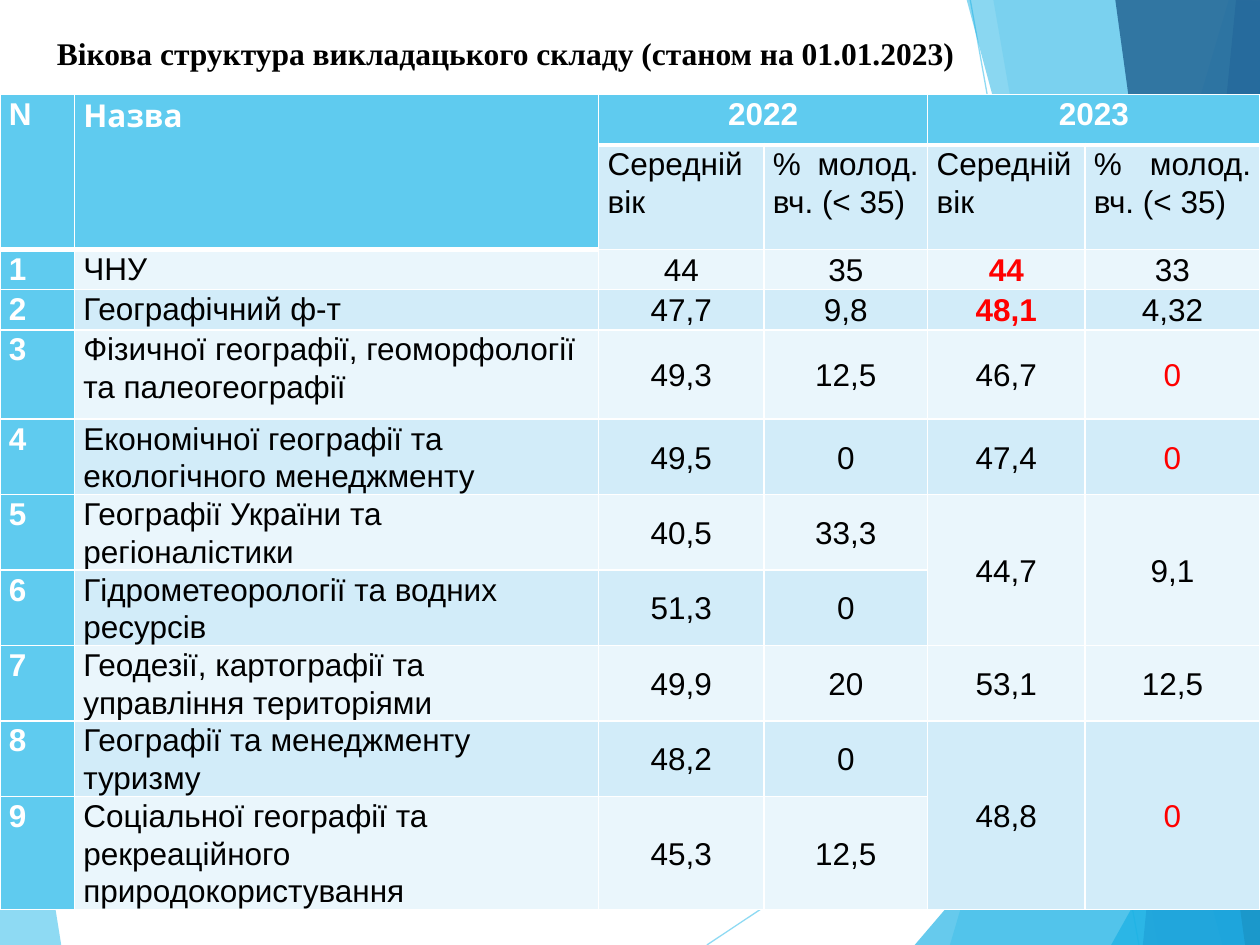
from typing import NamedTuple

from lxml import etree
from pptx import Presentation
from pptx.dml.color import RGBColor
from pptx.enum.shapes import MSO_CONNECTOR
from pptx.enum.text import MSO_ANCHOR, PP_ALIGN
from pptx.oxml.ns import qn
from pptx.util import Cm, Pt

LEFT, CENTER, JUSTIFY = PP_ALIGN.LEFT, PP_ALIGN.CENTER, PP_ALIGN.JUSTIFY
TOP, MIDDLE = MSO_ANCHOR.TOP, MSO_ANCHOR.MIDDLE
STRAIGHT = MSO_CONNECTOR.STRAIGHT

COLORS = {
    "white": "FFFFFF", "black": "000000", "red": "FF0000",
    "sky": "5FCBEF", "cyan": "17B0E4", "blue": "2E83C3", "navy": "226292",
    "band_dark": "D2ECF9", "band_light": "EAF6FC",
}


class Facet(NamedTuple):
    points: list[tuple[float, float]]  # cm
    color: str
    opacity: int


class Ray(NamedTuple):
    start: tuple[float, float]  # cm
    end: tuple[float, float]


class Row(NamedTuple):
    name: str
    values: list[str | None]  # None continues the cell above
    red: tuple[int, ...] = ()
    bold: tuple[int, ...] = ()


CORNER = Facet([(-0.03, 11.15), (1.24, 19.08), (-0.03, 19.05)], "sky", 70)
RAYS = [Ray((14.25, 19.05), (25.43, 11.61)), Ray((19.56, 0), (22.96, 19.05))]
FACETS = [
    Facet([(24.77, 0), (19.15, 19.05), (25.45, 19.08), (25.43, 0.03)], "sky", 36),
    Facet([(20.02, -0.03), (23.34, 19.05), (25.43, 19.05), (25.43, -0.03)], "sky", 20),
    Facet([(18.44, 19.05), (25.4, 10.9), (25.43, 19.05)], "cyan", 66),
    Facet([(19.48, -0.03), (24.64, 19.05), (25.43, 19.02), (25.43, -0.03)], "cyan", 50),
    Facet([(24.92, -0.03), (23.04, 19.05), (25.43, 19.05), (25.4, -0.03)], "blue", 70),
    Facet([(22.48, -0.03), (25.1, 19.05), (25.45, 19.05), (25.4, -0.03)], "navy", 82),
    Facet([(22.4, 19.05), (25.45, 13.59), (25.45, 19.05)], "cyan", 66),
]

COL_WIDTHS = [1.5, 10.57, 3.33, 3.3, 3.17, 3.53]
ROW_HEIGHTS = [1.02, 2.11, 0.81, 0.81, 1.8] + [1.4] * 5 + [2.11]
HEADERS = [(0, "N", "Arial", JUSTIFY), (1, "Назва", "Cabin", JUSTIFY),
           (2, "2022", "Arial", CENTER), (4, "2023", "Arial", CENTER)]
SUBHEADERS = ["Середній вік", "% молод. вч. (< 35)"] * 2
ROWS = [
    Row("ЧНУ", ["44", "35", "44", "33"], red=(2,), bold=(2,)),
    Row("Географічний ф-т", ["47,7", "9,8", "48,1", "4,32"], red=(2,), bold=(2,)),
    Row("Фізичної географії, геоморфології та палеогеографії",
        ["49,3", "12,5", "46,7", "0"], red=(3,)),
    Row("Економічної географії та екологічного менеджменту",
        ["49,5", "0", "47,4", "0"], red=(3,)),
    Row("Географії України та регіоналістики", ["40,5", "33,3", "44,7", "9,1"]),
    Row("Гідрометеорології та водних ресурсів", ["51,3", "0", None, None]),
    Row("Геодезії, картографії та управління територіями",
        ["49,9", "20", "53,1", "12,5"]),
    Row("Географії та менеджменту туризму", ["48,2", "0", "48,8", "0"], red=(3,)),
    Row("Соціальної географії та рекреаційного природокористування",
        ["45,3", "12,5", None, None]),
]


def rgb(name: str) -> RGBColor:
    return RGBColor.from_string(COLORS[name])


def set_opacity(fill_parent, opacity: int) -> None:
    clr = next(fill_parent.iter(qn("a:srgbClr")))
    etree.SubElement(clr, qn("a:alpha"), val=str(opacity * 1000))


def draw_facet(s, facet: Facet) -> None:
    pts = [(Cm(x), Cm(y)) for x, y in facet.points]
    builder = s.shapes.build_freeform(*pts[0], scale=1.0)
    builder.add_line_segments(pts[1:], close=True)
    sp = builder.convert_to_shape()
    sp.shadow.inherit = False
    sp.fill.solid()
    sp.fill.fore_color.rgb = rgb(facet.color)
    set_opacity(sp.fill._xPr, facet.opacity)
    sp.line.fill.background()


def draw_ray(s, ray: Ray) -> None:
    ends = [Cm(v) for v in ray.start + ray.end]
    cn = s.shapes.add_connector(STRAIGHT, *ends)
    cn.line.color.rgb = rgb("sky")
    cn.line.width = Pt(0.75)
    set_opacity(cn.line._get_or_add_ln(), 70)
    etree.SubElement(cn._element.spPr, qn("a:effectLst"))


def write(tf, text: str, *, font: str = "Arial", color: str = "black",
          bold: bool = False, align=LEFT, spacing: float = 1.0) -> None:
    p = tf.paragraphs[0]
    p.alignment, p.line_spacing = align, spacing
    r = p.add_run()
    r.text = text
    r.font.size, r.font.name, r.font.bold = Pt(18), font, bold
    r.font.color.rgb = rgb(color)


def style_cell(cell, fill: str, bottom: float = 1) -> None:
    cell.margin_left = cell.margin_right = Cm(0.18)
    cell.margin_top = cell.margin_bottom = 0
    tc_pr = cell._tc.get_or_add_tcPr()
    for side, width in (("L", 1), ("R", 1), ("T", 1), ("B", bottom)):
        ln = etree.SubElement(tc_pr, qn(f"a:ln{side}"), w=str(Pt(width)))
        solid = etree.SubElement(ln, qn("a:solidFill"))
        etree.SubElement(solid, qn("a:srgbClr"), val=COLORS["white"])
    cell.fill.solid()
    cell.fill.fore_color.rgb = rgb(fill)


def fill_cell(cell, text: str, *, anchor=TOP, **fmt) -> None:
    cell.vertical_anchor = anchor
    write(cell.text_frame, text, spacing=1.07, **fmt)


def draw_table(s) -> None:
    n_rows, n_cols = len(ROW_HEIGHTS), len(COL_WIDTHS)
    frame = s.shapes.add_table(n_rows, n_cols, 0, Cm(1.9),
                               Cm(sum(COL_WIDTHS)), Cm(sum(ROW_HEIGHTS)))
    tbl = frame.table
    tbl.first_row = tbl.horz_banding = False
    for col, width in zip(tbl.columns, COL_WIDTHS):
        col.width = Cm(width)
    for row, height in zip(tbl.rows, ROW_HEIGHTS):
        row.height = Cm(height)

    # Fills and borders
    for i in range(n_rows):
        band = "band_dark" if i % 2 else "band_light"
        for j in range(n_cols):
            header = i == 0 or (i == 1 and j < 2)
            style_cell(tbl.cell(i, j), "sky" if header or j == 0 else band,
                       bottom=3 if header else 1)

    # Two-level header
    for j, text, font, align in HEADERS:
        end = tbl.cell(1, j) if j < 2 else tbl.cell(0, j + 1)
        tbl.cell(0, j).merge(end)
        fill_cell(tbl.cell(0, j), text, font=font, color="white", bold=True, align=align)
    for j, text in enumerate(SUBHEADERS, 2):
        fill_cell(tbl.cell(1, j), text, align=JUSTIFY)

    # Body
    for i, row in enumerate(ROWS, 2):
        fill_cell(tbl.cell(i, 0), str(i - 1), color="white", bold=True, align=JUSTIFY)
        fill_cell(tbl.cell(i, 1), row.name)
        for k, value in enumerate(row.values):
            cell = tbl.cell(i, k + 2)
            if value is None:
                tbl.cell(i - 1, k + 2).merge(cell)
            else:
                fill_cell(cell, value, anchor=MIDDLE, align=CENTER, bold=k in row.bold,
                          color="red" if k in row.red else "black")


def main() -> None:
    prs = Presentation()
    prs.slide_width, prs.slide_height = Cm(25.4), Cm(19.05)
    s = prs.slides.add_slide(prs.slide_layouts[6])

    # Faceted background
    draw_facet(s, CORNER)
    for ray in RAYS:
        draw_ray(s, ray)
    for facet in FACETS:
        draw_facet(s, facet)

    draw_table(s)

    # Title
    title = s.shapes.add_textbox(Cm(0.9), Cm(0.56), Cm(21.2), Cm(1.02))
    title.text_frame.word_wrap = True
    write(title.text_frame, "Вікова структура викладацького складу (станом на 01.01.2023)",
          font="Times New Roman", bold=True)

    prs.save("out.pptx")


if __name__ == "__main__":
    main()
